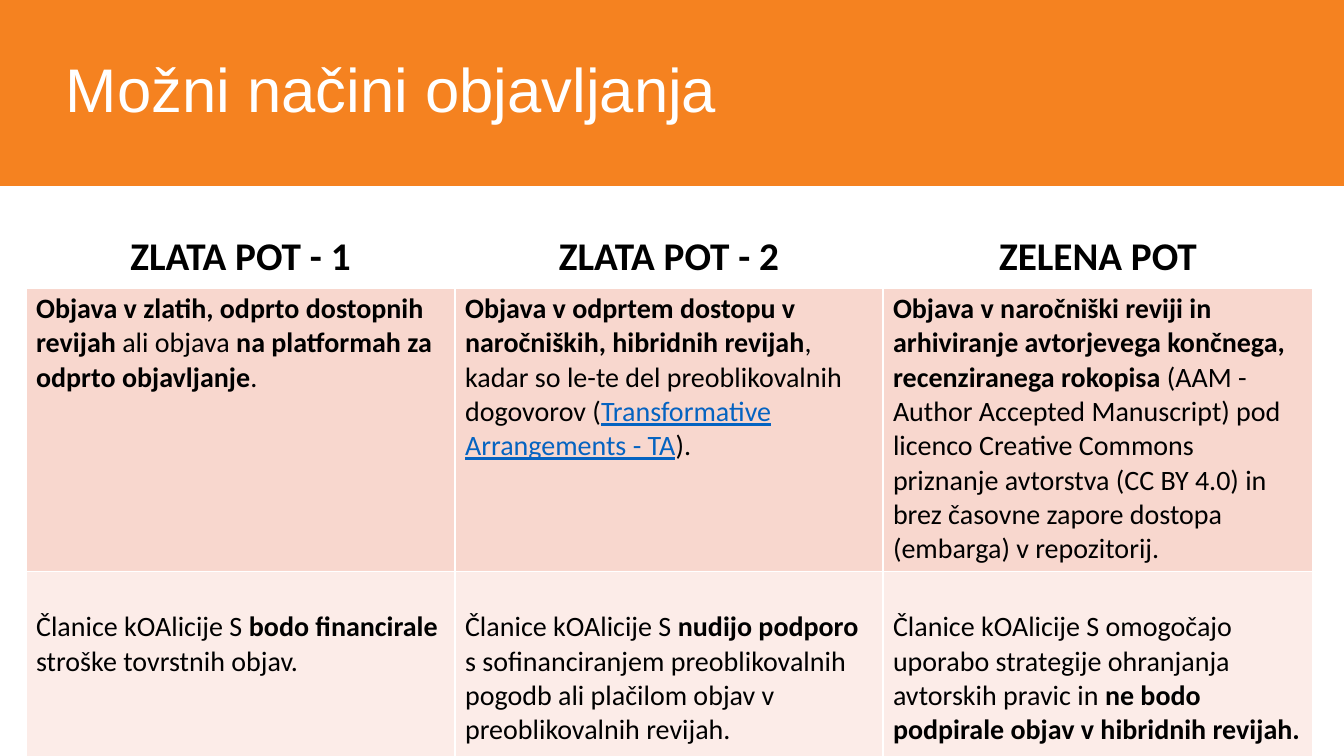
from pptx import Presentation
from pptx import util as u
from pptx.dml.color import RGBColor
from pptx.enum import shapes, text
from pptx.oxml import parse_xml
from pptx.oxml.ns import nsdecls

PX = 914400 / 100.8
ORANGE = RGBColor(0xF5, 0x82, 0x20)
WHITE = RGBColor(0xFF, 0xFF, 0xFF)
BLACK = RGBColor(0, 0, 0)
LINK_BLUE = RGBColor(0x05, 0x63, 0xC1)
PEACH = RGBColor(0xF8, 0xD7, 0xCE)
PALE_PEACH = RGBColor(0xFC, 0xEC, 0xE8)

PLAIN = {"bold": False}
BOLD = {"bold": True}
LINK = {"bold": False, "underline": True, "color": LINK_BLUE}

COLUMN_WIDTHS = [429, 428, 430]
HEADINGS = ["ZLATA POT - 1", "ZLATA POT - 2", "ZELENA POT"]
PATHS = [
    [("Objava v zlatih, odprto dostopnih revijah ", BOLD),
     ("ali objava ", PLAIN),
     ("na platformah za odprto objavljanje", BOLD),
     (".", PLAIN)],
    [("Objava v odprtem dostopu v naročniških, hibridnih revijah", BOLD),
     (", kadar so le-te del preoblikovalnih dogovorov (", PLAIN),
     ("Transformative Arrangements - TA", LINK),
     (").", PLAIN)],
    [("Objava v naročniški reviji in arhiviranje avtorjevega končnega, "
      "recenziranega rokopisa ", BOLD),
     ("(AAM - Author Accepted Manuscript) pod licenco Creative Commons "
      "priznanje avtorstva (CC BY 4.0) in brez časovne zapore dostopa "
      "(embarga) v repozitorij.", PLAIN)],
]
FUNDING = [
    [("Članice kOAlicije S ", PLAIN),
     ("bodo financirale ", BOLD),
     ("stroške tovrstnih objav.", PLAIN)],
    [("Članice kOAlicije S ", PLAIN),
     ("nudijo podporo ", BOLD),
     ("s sofinanciranjem preoblikovalnih pogodb ali plačilom objav "
      "v preoblikovalnih revijah.", PLAIN)],
    [("Članice kOAlicije S omogočajo uporabo strategije ohranjanja "
      "avtorskih pravic in ", PLAIN),
     ("ne bodo podpirale objav v hibridnih revijah.", BOLD)],
]
ROWS = [
    {"height": 83, "fill": None, "size": 28, "margin_top": 5,
     "paragraph": {"alignment": text.PP_ALIGN.CENTER, "line_spacing": 1.5},
     "borders": {"L": 1, "R": 1, "T": 1, "B": 3},
     "cells": [[(heading, BOLD)] for heading in HEADINGS]},
    {"height": 267, "fill": PEACH, "size": 20, "margin_top": 5,
     "paragraph": {"alignment": text.PP_ALIGN.LEFT},
     "borders": {"L": 1, "R": 1, "T": 3, "B": 1},
     "cells": PATHS},
    {"height": 190, "fill": PALE_PEACH, "size": 20, "margin_top": 39,
     "paragraph": {"alignment": text.PP_ALIGN.LEFT},
     "borders": {"L": 1, "R": 1, "T": 1, "B": 1},
     "cells": FUNDING},
]


def px(length):
    return u.Emu(round(length * PX))


def apply(target, values):
    for name, value in values.items():
        setattr(target, name, value)


def add_words(paragraph, words, font):
    run = paragraph.add_run()
    run.text = words
    values = dict(font)
    run.font.color.rgb = values.pop("color")
    apply(run.font, values)


def add_title_band(slide, words):
    band = slide.shapes.add_shape(
        shapes.MSO_SHAPE.RECTANGLE, 0, 0, px(1344), px(186))
    band.shadow.inherit = False
    band.fill.solid()
    band.fill.fore_color.rgb = ORANGE
    band.line.fill.background()
    apply(band.text_frame, {"word_wrap": True, "margin_left": px(66),
                            "vertical_anchor": text.MSO_ANCHOR.MIDDLE})
    title = band.text_frame.paragraphs[0]
    apply(title, {"alignment": text.PP_ALIGN.LEFT, "line_spacing": 0.9})
    add_words(title, words,
              {"name": "Arial", "size": u.Pt(44), "color": WHITE})


def add_borders(cell, borders):
    properties = cell._tc.get_or_add_tcPr()
    for side, points in borders.items():
        properties.append(parse_xml(
            f'<a:ln{side} {nsdecls("a")} w="{u.Pt(points)}"><a:solidFill>'
            f'<a:srgbClr val="{WHITE}"/></a:solidFill></a:ln{side}>'))


def fill_cell(cell, pieces, row):
    add_borders(cell, row["borders"])
    if row["fill"] is None:
        cell.fill.background()
    else:
        cell.fill.solid()
        cell.fill.fore_color.rgb = row["fill"]
    cell.margin_top = px(row["margin_top"])
    paragraph = cell.text_frame.paragraphs[0]
    apply(paragraph, row["paragraph"])
    base = {"name": "Calibri", "size": u.Pt(row["size"]), "color": BLACK}
    for words, style in pieces:
        add_words(paragraph, words, base | style)


def add_paths_table(slide):
    table = slide.shapes.add_table(
        len(ROWS), len(COLUMN_WIDTHS), px(26), px(204),
        px(sum(COLUMN_WIDTHS)), px(sum(row["height"] for row in ROWS))).table
    apply(table, {"first_row": False, "horz_banding": False})
    for column, width in zip(table.columns, COLUMN_WIDTHS):
        column.width = px(width)
    for table_row, row in zip(table.rows, ROWS):
        table_row.height = px(row["height"])
        for cell, pieces in zip(table_row.cells, row["cells"]):
            fill_cell(cell, pieces, row)


def main():
    deck = Presentation()
    apply(deck, {"slide_width": px(1344), "slide_height": px(756)})
    slide = deck.slides.add_slide(deck.slide_layouts[6])
    add_title_band(slide, "Možni načini objavljanja")
    add_paths_table(slide)
    deck.save("out.pptx")


if __name__ == "__main__":
    main()
